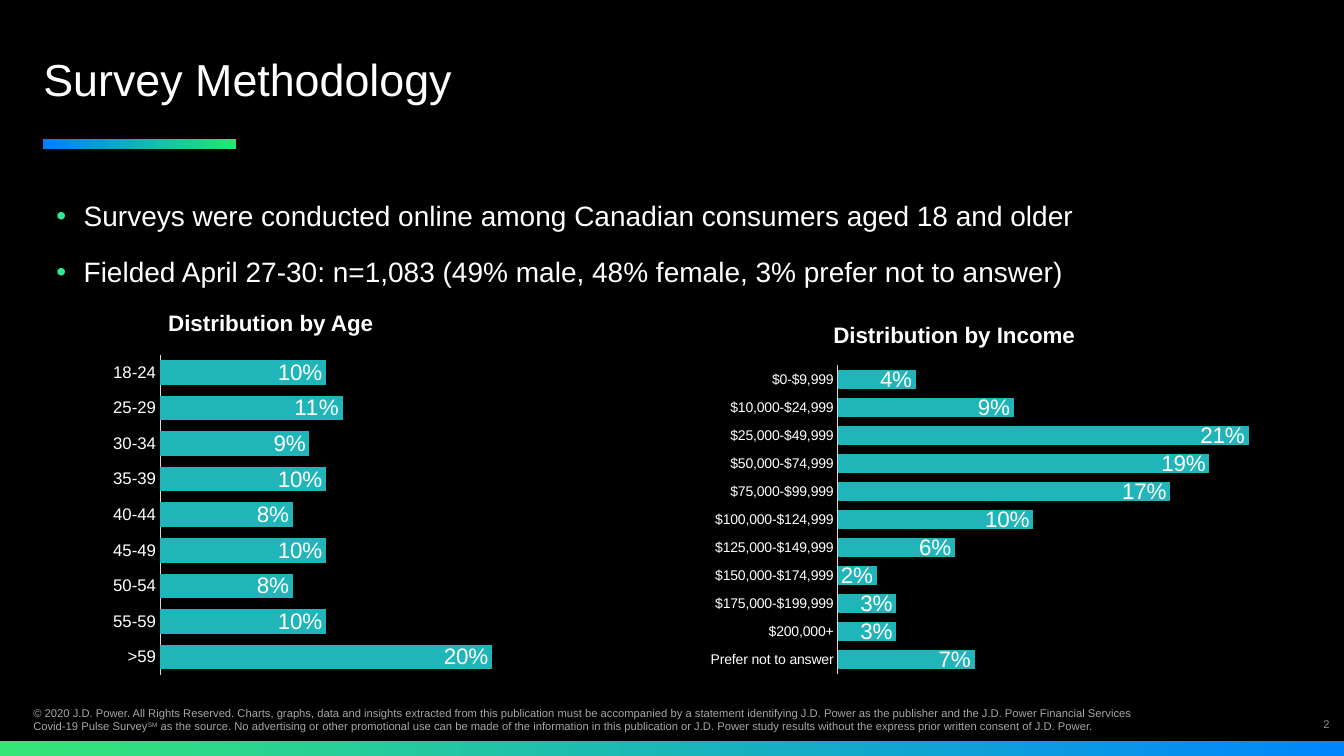
from lxml.etree import SubElement
from pptx import Presentation
from pptx.chart.data import CategoryChartData
from pptx.dml.color import RGBColor
from pptx.enum.chart import XL_CHART_TYPE as ChartType, XL_LABEL_POSITION as LabelPos
from pptx.enum.chart import XL_TICK_MARK as TickMark
from pptx.enum.shapes import MSO_SHAPE as Shape
from pptx.enum.text import MSO_ANCHOR as Anchor, MSO_AUTO_SIZE as AutoSize, PP_ALIGN as Align
from pptx.oxml import parse_xml
from pptx.oxml.ns import nsdecls, qn
from pptx.util import Cm, Pt

BLACK = RGBColor(0x00, 0x00, 0x00)
WHITE = RGBColor(0xFF, 0xFF, 0xFF)
TEAL = RGBColor(0x20, 0xB5, 0xB8)
AXIS_GREY = RGBColor(0xD9, 0xD9, 0xD9)
FOOTER_GREY = RGBColor(0xA7, 0xA7, 0xA7)
NUMBER_GREY = RGBColor(0x91, 0x91, 0x91)
BAR_GREEN = RGBColor(0x33, 0xE7, 0x76)
BAR_BLUE = RGBColor(0x00, 0x86, 0xFC)
RULE_BLUE = RGBColor(0x00, 0x7F, 0xFF)
RULE_GREEN = RGBColor(0x21, 0xEA, 0x70)
FONT = "Arial"


def add_run(p, text, size=8, color=WHITE, bold=False, baseline=None):
    r = p.add_run()
    r.text = text
    r.font.name, r.font.size, r.font.bold = FONT, Pt(size), bold
    r.font.color.rgb = color
    if baseline:
        r.font._element.set("baseline", str(baseline))
    return r


def add_box(left, top, width, height, wrap=True):
    tf = s.shapes.add_textbox(Cm(left), Cm(top), Cm(width), Cm(height)).text_frame
    tf.word_wrap = wrap
    return tf


prs = Presentation()
prs.slide_width, prs.slide_height = Cm(33.87), Cm(19.05)
s = prs.slides.add_slide(prs.slide_layouts[5])
s.background.fill.solid()
s.background.fill.fore_color.rgb = BLACK

# Gradient bars: slide bottom and title rule
for left, top, width, height, start, end in (
    (0, 18.67, 33.87, 0.38, BAR_GREEN, BAR_BLUE),
    (1.09, 3.5, 4.85, 0.25, RULE_BLUE, RULE_GREEN),
):
    sp = s.shapes.add_shape(Shape.RECTANGLE, Cm(left), Cm(top), Cm(width), Cm(height))
    sp.shadow.inherit = False
    sp.line.fill.background()
    sp.fill.gradient()
    sp.fill.gradient_angle = 0
    for stop, color in zip(sp.fill.gradient_stops, (start, end)):
        stop.color.rgb = color

# Footer
tf = add_box(0.84, 17.75, 30.48, 0.76)
tf.margin_left = tf.margin_right = tf.margin_top = tf.margin_bottom = 0
tf.vertical_anchor = Anchor.MIDDLE
p = tf.paragraphs[0]
add_run(p, "© 2020 J.D. Power. All Rights Reserved. Charts, graphs, data and insights extracted "
        "from this publication must be accompanied by a statement identifying J.D. Power as the "
        "publisher and the J.D. Power Financial Services", color=FOOTER_GREY)
p.add_line_break()
add_run(p, "Covid-19 Pulse Survey", color=FOOTER_GREY)
add_run(p, "SM", color=FOOTER_GREY, baseline=30000)
add_run(p, " as the source. No advertising or other promotional use can be made of the "
        "information in this publication or J.D. Power study results without the express prior "
        "written consent of J.D. Power.", color=FOOTER_GREY)

# Page number
p = add_box(32.39, 17.96, 1.37, 0.71).paragraphs[0]
p.alignment = Align.RIGHT
add_run(p, "2", color=NUMBER_GREY)

# Title
title = s.shapes.title
title.left, title.top, title.width, title.height = Cm(0.84), Cm(0.64), Cm(32.05), Cm(2.87)
tf = title.text_frame
tf.auto_size = AutoSize.NONE
tf.vertical_anchor = Anchor.MIDDLE
p = tf.paragraphs[0]
p.alignment, p.line_spacing = Align.LEFT, 0.9
add_run(p, "Survey Methodology", size=32)

# Bullets
tf = add_box(0.84, 4.88, 32.05, 10.82)
for i, text in enumerate((
    "Surveys were conducted online among Canadian consumers aged 18 and older",
    "Fielded April 27-30: n=1,083 (49% male, 48% female, 3% prefer not to answer)",
)):
    p = tf.add_paragraph() if i else tf.paragraphs[0]
    pPr = p._p.get_or_add_pPr()
    pPr.set("marL", str(Cm(1.02)))
    pPr.set("indent", str(Cm(-0.69)))
    SubElement(SubElement(pPr, qn("a:buClr")), qn("a:srgbClr")).set("val", "32E594")
    SubElement(pPr, qn("a:buFont")).set("typeface", FONT)
    SubElement(pPr, qn("a:buChar")).set("char", "•")
    if i:
        p.space_before = Pt(16)
    add_run(p, text, size=20)

# Bar charts: heading, heading box, chart box, plot area, axis text size, data
age = {"18-24": 0.10, "25-29": 0.11, "30-34": 0.09, "35-39": 0.10, "40-44": 0.08,
       "45-49": 0.10, "50-54": 0.08, "55-59": 0.10, ">59": 0.20}
income = {"$0-$9,999": 0.04, "$10,000-$24,999": 0.09, "$25,000-$49,999": 0.21,
          "$50,000-$74,999": 0.19, "$75,000-$99,999": 0.17, "$100,000-$124,999": 0.10,
          "$125,000-$149,999": 0.06, "$150,000-$174,999": 0.02, "$175,000-$199,999": 0.03,
          "$200,000+": 0.03, "Prefer not to answer": 0.07}
for heading, heading_box, chart_box, plot_box, axis_size, shares in (
    ("Distribution by Age", (3.99, 7.67, 5.77, 0.94), (1.24, 8.61, 14.48, 9.04),
     (0.193, 0.036, 0.722, 0.893), 12, age),
    ("Distribution by Income", (20.75, 7.98, 6.71, 0.94), (15.6, 8.92, 18.8, 8.08),
     (0.293, 0.036, 0.656, 0.961), 10, income),
):
    data = CategoryChartData(number_format="0%")
    data.categories = list(shares)
    data.add_series("Series 1", list(shares.values()))
    chart = s.shapes.add_chart(ChartType.BAR_CLUSTERED, *map(Cm, chart_box), data).chart
    chart.has_legend = chart.has_title = False
    chart.font.name, chart.font.size = FONT, Pt(10)

    cat = chart.category_axis
    cat.reverse_order = True
    cat.major_tick_mark = cat.minor_tick_mark = TickMark.NONE
    cat.format.line.color.rgb = AXIS_GREY
    cat.format.line.width = Pt(0.75)
    val = chart.value_axis
    val.visible = val.has_major_gridlines = False
    val.minimum_scale, val.maximum_scale = 0, 0.25

    plot = chart.plots[0]
    plot.gap_width, plot.vary_by_categories = 45, False
    plot.series[0].format.fill.solid()
    plot.series[0].format.fill.fore_color.rgb = TEAL
    plot.has_data_labels = True
    labels = plot.data_labels
    labels.show_value, labels.position = True, LabelPos.INSIDE_END
    labels.number_format, labels.number_format_is_linked = "0%", False
    for font, size in ((cat.tick_labels.font, axis_size), (labels.font, 16)):
        font.name, font.size = FONT, Pt(size)
        font.color.rgb = WHITE

    # Fixed inner plot area
    area = chart._chartSpace.chart.plotArea
    for old in area.findall(qn("c:layout")):
        area.remove(old)
    sizes = "".join(f'<c:{k} val="{v}"/>' for k, v in zip("xywh", plot_box))
    area.insert(0, parse_xml(
        f'<c:layout {nsdecls("c")}><c:manualLayout><c:layoutTarget val="inner"/>'
        f'<c:xMode val="edge"/><c:yMode val="edge"/>{sizes}</c:manualLayout></c:layout>'))

    add_run(add_box(*heading_box, wrap=False).paragraphs[0], heading, size=16, bold=True)

prs.save("out.pptx")
